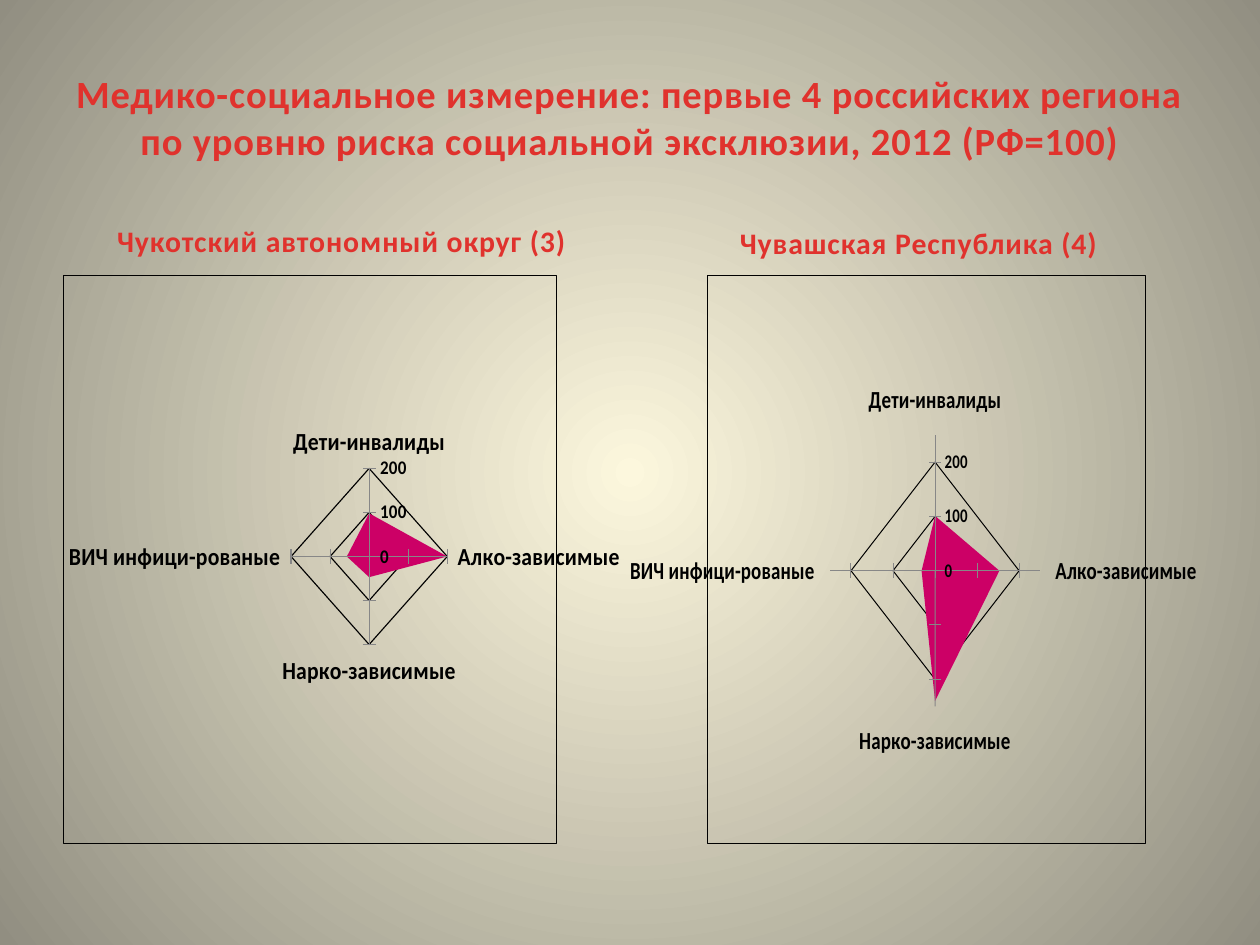
from dataclasses import dataclass
from typing import Optional

from lxml.etree import SubElement
from pptx import Presentation
from pptx.chart.data import CategoryChartData
from pptx.dml.color import RGBColor
from pptx.enum.chart import XL_CHART_TYPE, XL_TICK_MARK
from pptx.enum.text import MSO_ANCHOR, PP_ALIGN
from pptx.oxml import parse_xml
from pptx.oxml.ns import nsdecls, qn
from pptx.util import Inches, Pt


@dataclass(frozen=True)
class Theme:
    font: str = "Calibri"
    glow: str = "FCF7DD"
    edge: str = "918E81"
    red: str = "E0322D"
    dark_red: str = "A2201C"
    ink: str = "000000"
    area: str = "CC0066"
    title: int = 22
    heading: int = 17
    category: int = 14
    scale: int = 11
    base: int = 10
    line: float = 0.75


@dataclass(frozen=True)
class Box:
    x: float
    y: float
    w: float
    h: float


@dataclass(frozen=True)
class Region:
    heading: str
    heading_idx: int
    heading_box: Box
    chart_box: Box
    plot: Box  # fractions of the chart area
    values: tuple
    maximum: int
    axis_color: Optional[str] = None


THEME = Theme()
TITLE = ("Медико-социальное измерение: первые 4 российских региона "
         "по уровню риска социальной эксклюзии, 2012 (РФ=100)")
CATEGORIES = ("Дети-инвалиды", "Алко-зависимые", "Нарко-зависимые", "ВИЧ инфици-рованые")
REGIONS = (
    Region("Чукотский автономный округ (3)", 1, Box(0.5, 1.68, 4.42, 0.42),
           Box(0.5, 2.18, 4.42, 4.52), Box(0.46, 0.34, 0.32, 0.31),
           (98, 200, 47, 57), 200, "002060"),
    Region("Чувашская Республика (4)", 3, Box(5.08, 1.62, 4.42, 0.5),
           Box(5, 2.18, 4.5, 4.52), Box(0.28, 0.26, 0.48, 0.52),
           (101, 153, 240, 32), 250),
)


def rgb(value: str) -> RGBColor:
    return RGBColor.from_string(value)


def set_gradient(fill, start: str, end: str, start_pos: float = 0) -> None:
    fill.gradient()
    first, last = fill.gradient_stops
    first.color.rgb, first.position = rgb(start), start_pos
    last.color.rgb, last.position = rgb(end), 1


def paint_background(slide) -> None:
    """Radial gradient spreading from the slide centre."""
    set_gradient(slide.background.fill, THEME.glow, THEME.edge)
    grad = next(slide.background._cSld.iter(qn("a:gradFill")))
    linear = grad.find(qn("a:lin"))
    radial = parse_xml(
        f'<a:path {nsdecls("a")} path="circle">'
        '<a:fillToRect l="50000" t="50000" r="50000" b="50000"/></a:path>')
    grad.replace(linear, radial)


def fill_text(sp, box: Box, text: str, size: int, anchor: MSO_ANCHOR) -> None:
    sp.left, sp.top = Inches(box.x), Inches(box.y)
    sp.width, sp.height = Inches(box.w), Inches(box.h)
    tf = sp.text_frame
    tf.vertical_anchor = anchor
    p = tf.paragraphs[0]
    p.alignment = PP_ALIGN.CENTER
    r = p.add_run()
    r.text = text
    r.font.name, r.font.size, r.font.bold = THEME.font, Pt(size), True
    set_gradient(r.font.fill, THEME.red, THEME.dark_red, 0.25)
    r.font.fill.gradient_angle = 270
    r._r.get_or_add_rPr().set("spc", "50")


def set_plot_layout(chart, plot: Box) -> None:
    area = chart._chartSpace.chart.plotArea
    for old in area.findall(qn("c:layout")):
        area.remove(old)
    layout = parse_xml(f'<c:layout {nsdecls("c")}><c:manualLayout/></c:layout>')
    settings = (("layoutTarget", "inner"), ("xMode", "edge"), ("yMode", "edge"),
                ("x", plot.x), ("y", plot.y), ("w", plot.w), ("h", plot.h))
    for tag, value in settings:
        SubElement(layout[0], qn(f"c:{tag}")).set("val", str(value))
    area.insert(0, layout)


def frame_chart(chart) -> None:
    """Transparent chart area with a thin outline."""
    chart._chartSpace.chart.addnext(parse_xml(
        f'<c:spPr {nsdecls("c", "a")}><a:noFill/><a:ln w="{Pt(THEME.line)}"><a:solidFill>'
        f'<a:srgbClr val="{THEME.ink}"/></a:solidFill></a:ln></c:spPr>'))


def add_radar(slide, region: Region) -> None:
    data = CategoryChartData(number_format="General")
    data.categories = CATEGORIES
    data.add_series("Series 1", region.values)
    box = region.chart_box
    chart = slide.shapes.add_chart(
        XL_CHART_TYPE.RADAR_FILLED, Inches(box.x), Inches(box.y),
        Inches(box.w), Inches(box.h), data).chart
    chart.has_legend = chart.has_title = False
    chart.font.name, chart.font.size = THEME.font, Pt(THEME.base)
    chart.font.color.rgb = rgb(THEME.ink)
    frame_chart(chart)
    set_plot_layout(chart, region.plot)

    area = chart.plots[0].series[0].format
    area.fill.solid()
    area.fill.fore_color.rgb = rgb(THEME.area)
    area.line.fill.background()

    cat, val = chart.category_axis, chart.value_axis
    for axis, size in ((cat, THEME.category), (val, THEME.scale)):
        axis.has_major_gridlines = True
        font = axis.tick_labels.font
        font.name, font.size, font.bold = THEME.font, Pt(size), True
        font.color.rgb = rgb(THEME.ink)
    cat.major_tick_mark = XL_TICK_MARK.OUTSIDE
    if region.axis_color:
        cat.format.line.color.rgb = rgb(region.axis_color)
        cat.format.line.width = Pt(THEME.line)
    val.major_tick_mark = XL_TICK_MARK.CROSS
    val.minimum_scale, val.maximum_scale, val.major_unit = 0, region.maximum, 100
    val.tick_labels.number_format = "0"
    val.tick_labels.number_format_is_linked = False
    grid = val.major_gridlines.format.line
    grid.color.rgb, grid.width = rgb(THEME.ink), Pt(THEME.line)


def main() -> None:
    prs = Presentation()
    prs.slide_width, prs.slide_height = Inches(10), Inches(7.5)
    slide = prs.slides.add_slide(prs.slide_layouts.get_by_name("Comparison"))
    paint_background(slide)
    fill_text(slide.shapes.title, Box(0.5, 0.3, 9, 1.25), TITLE, THEME.title, MSO_ANCHOR.MIDDLE)
    holders = {sp.placeholder_format.idx: sp for sp in slide.placeholders}
    for region in REGIONS:
        fill_text(holders[region.heading_idx], region.heading_box, region.heading,
                  THEME.heading, MSO_ANCHOR.BOTTOM)
        add_radar(slide, region)
    used = {0} | {region.heading_idx for region in REGIONS}
    for idx, sp in holders.items():
        if idx not in used:
            sp.element.getparent().remove(sp.element)
    prs.save("out.pptx")


if __name__ == "__main__":
    main()
